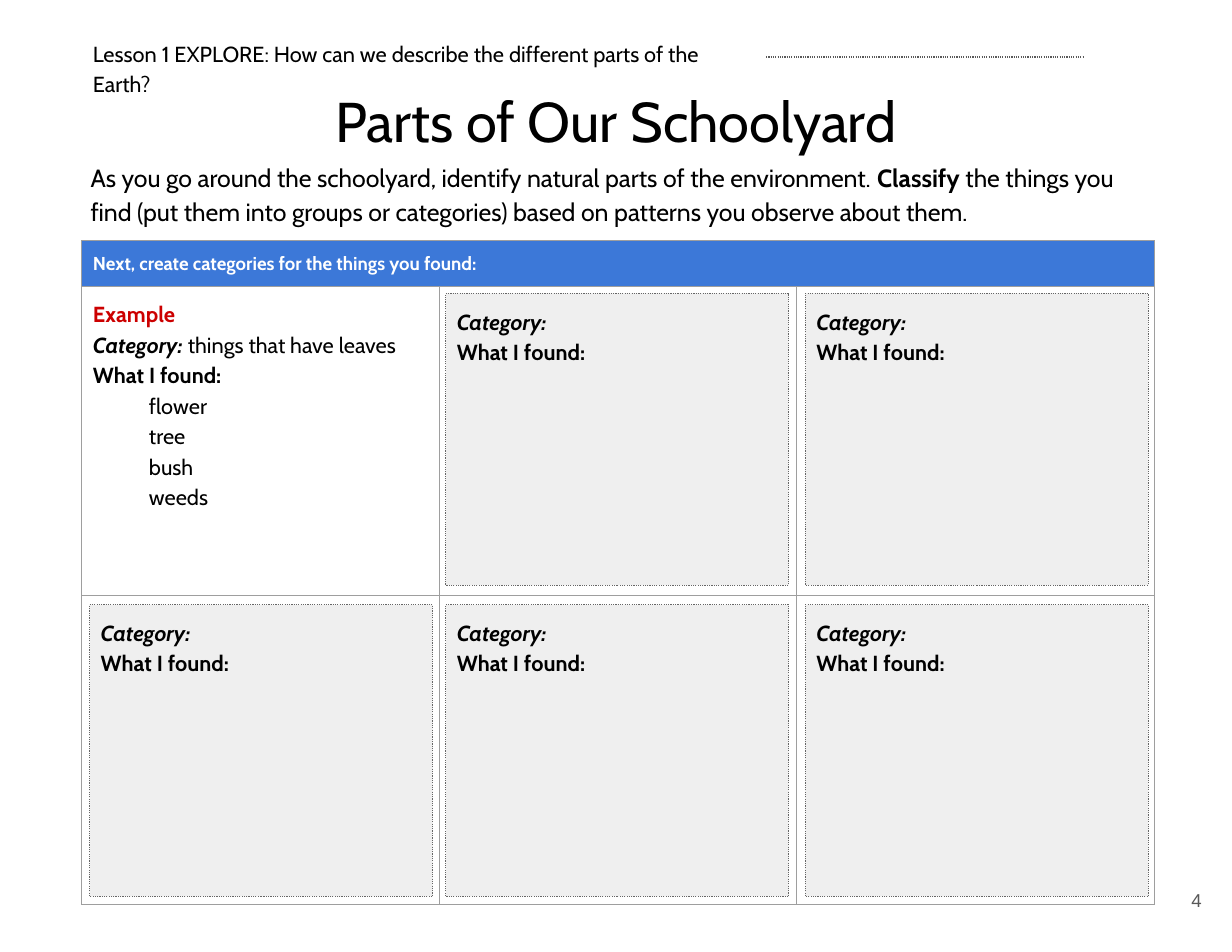
from itertools import product
from lxml.etree import SubElement
from pptx import Presentation
from pptx.dml.color import RGBColor
from pptx.enum.dml import MSO_LINE
from pptx.enum.shapes import MSO_CONNECTOR, MSO_SHAPE
from pptx.enum.text import MSO_ANCHOR, PP_ALIGN
from pptx.oxml.ns import qn
from pptx.util import Pt

TITLE = [[("Parts of Our Schoolyard", "")]]
LESSON = [[("Lesson 1 EXPLORE: How can we describe the different parts of the Earth?", "")]]
DIRECTIONS = [[
    ("As you go around the schoolyard, identify natural parts of the environment. ", ""),
    ("Classify", "b"),
    (" the things you find (put them into groups or categories) "
     "based on patterns you observe about them.", ""),
]]
HEADING = [[("Next, create categories for the things you found:", "b")]]
EXAMPLE = [
    [("Example", "b", "accent")],
    [("Category: ", "bi"), ("things that have leaves", "")],
    [("What I found:", "b")],
]
EXAMPLE_FINDS = ["flower", "tree", "bush", "weeds"]
CARD = [[("Category:", "bi")], [("What I found:", "b")]]
PAGE_NUMBER = [[("4", "")]]

THEME = {
    "font": "Cabin", "number_font": "Arial",
    "title": 36, "directions": 16, "body": 14, "small": 12,
    "text": "000000", "accent": "CC0000", "white": "FFFFFF", "header": "3C78D8",
    "card": "EFEFEF", "card_line": "666666", "grey": "595959", "grid": "9E9E9E",
}

TABLE_LEFT, TABLE_TOP = 52.56, 154.8
COLUMN_WIDTH = 229.9
ROW_HEIGHTS = [29.5, 198.7, 198.7]
CARD_LEFTS = [57.6, 286.56, 517.68]
CARD_TOPS = [188.64, 388.8]
CARD_SIZE = (220.5, 187.5)
INSET = 7.2
LINE_WIDTH = 0.75


def color(name):
    return RGBColor.from_string(THEME[name])


def write(frame, lines, size, tint="text", font="font", align=PP_ALIGN.LEFT, spacing=1.15):
    frame.word_wrap = True
    for index, line in enumerate(lines):
        para = frame.paragraphs[0] if index == 0 else frame.add_paragraph()
        para.alignment = align
        para.line_spacing = spacing
        for text, style, *own_tint in line:
            span = para.add_run()
            span.text = text
            span.font.name = THEME[font]
            span.font.size = Pt(THEME[size])
            span.font.bold = "b" in style
            span.font.italic = "i" in style
            span.font.color.rgb = color(own_tint[0] if own_tint else tint)


def set_insets(target, inset=INSET):
    target.margin_left = target.margin_right = Pt(inset)
    target.margin_top = target.margin_bottom = Pt(inset)


def add_text(page, place, lines, size, anchor=MSO_ANCHOR.TOP, inset=INSET, **options):
    box = page.shapes.add_textbox(*map(Pt, place))
    set_insets(box.text_frame, inset)
    box.text_frame.vertical_anchor = anchor
    write(box.text_frame, lines, size, **options)
    return box


def style_dotted(line, tint):
    line.color.rgb = color(tint)
    line.width = Pt(LINE_WIDTH)
    line.dash_style = MSO_LINE.ROUND_DOT


def add_name_line(page):
    rule = page.shapes.add_connector(
        MSO_CONNECTOR.STRAIGHT, Pt(492.5), Pt(36.7), Pt(697), Pt(36.7))
    style_dotted(rule.line, "grey")
    SubElement(rule._element.spPr, qn("a:effectLst"))


def add_borders(cell):
    properties = cell._tc.get_or_add_tcPr()
    for side in ("lnL", "lnR", "lnT", "lnB"):
        border = SubElement(properties, qn(f"a:{side}"), w=str(Pt(LINE_WIDTH)))
        fill = SubElement(border, qn("a:solidFill"))
        SubElement(fill, qn("a:srgbClr"), val=THEME["grid"])


def add_category_table(page):
    columns = len(CARD_LEFTS)
    table = page.shapes.add_table(
        len(ROW_HEIGHTS), columns, Pt(TABLE_LEFT), Pt(TABLE_TOP),
        Pt(COLUMN_WIDTH * columns), Pt(sum(ROW_HEIGHTS))).table
    for column in table.columns:
        column.width = Pt(COLUMN_WIDTH)
    for row, height in zip(table.rows, ROW_HEIGHTS):
        row.height = Pt(height)
    for cell in table.iter_cells():
        set_insets(cell)
        add_borders(cell)
        cell.fill.background()
    header, example = table.cell(0, 0), table.cell(1, 0)
    header.merge(table.cell(0, columns - 1))
    for cell, fill in ((header, "header"), (example, "white")):
        cell.fill.solid()
        cell.fill.fore_color.rgb = color(fill)
    write(header.text_frame, HEADING, "small", tint="white", spacing=1.0)
    write(example.text_frame, EXAMPLE + [[(find, "")] for find in EXAMPLE_FINDS], "body")
    for para in example.text_frame.paragraphs[len(EXAMPLE):]:
        properties = para._p.get_or_add_pPr()
        properties.set("marL", str(Pt(36)))
        properties.set("indent", "0")


def add_card(page, left, top):
    card = page.shapes.add_shape(MSO_SHAPE.RECTANGLE, *map(Pt, (left, top, *CARD_SIZE)))
    card.shadow.inherit = False
    card.fill.solid()
    card.fill.fore_color.rgb = color("card")
    style_dotted(card.line, "card_line")
    set_insets(card.text_frame)
    card.text_frame.vertical_anchor = MSO_ANCHOR.TOP
    write(card.text_frame, CARD, "body")


def main():
    """Build the schoolyard classification worksheet."""
    deck = Presentation()
    deck.slide_width, deck.slide_height = Pt(792), Pt(612)
    page = deck.slides.add_slide(deck.slide_layouts[6])
    add_text(page, (0, 41.8, 792, 46.8), TITLE, "title", align=PP_ALIGN.CENTER)
    lesson = add_text(page, (52.56, 27.4, 423.4, 31), LESSON, "body", anchor=MSO_ANCHOR.MIDDLE)
    lesson.text_frame.paragraphs[0].space_after = Pt(10)
    add_text(page, (51.1, 94.3, 689.8, 56.2), DIRECTIONS, "directions")
    add_name_line(page)
    add_category_table(page)
    for top, left in list(product(CARD_TOPS, CARD_LEFTS))[1:]:
        add_card(page, left, top)
    add_text(page, (733.7, 555.1, 47.5, 46.8), PAGE_NUMBER, "small", anchor=MSO_ANCHOR.MIDDLE,
             inset=8.64, tint="grey", font="number_font", align=PP_ALIGN.RIGHT, spacing=1.0)
    deck.save("out.pptx")


if __name__ == "__main__":
    main()
